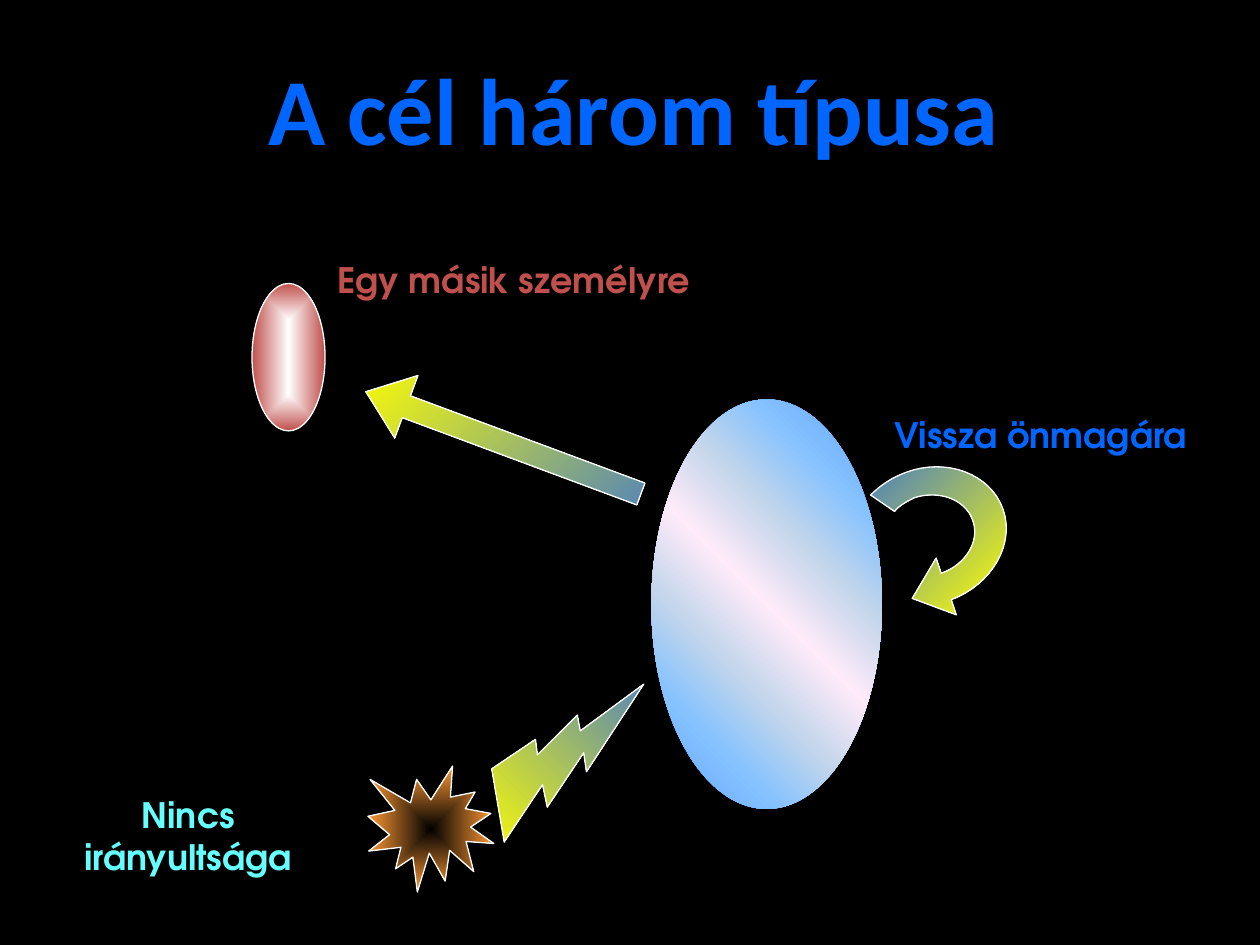
"""Build the slide on the three types of goal."""
from pptx import Presentation
from pptx import util as u
from pptx.dml.color import RGBColor
from pptx.enum import shapes, text
from pptx.oxml import parse_xml
from pptx.oxml.ns import nsdecls, qn


def color(value):
    return RGBColor.from_string(value)


def paint(shape, stops, angle=None, outlined=True):
    shape.shadow.inherit = False
    shape.fill.gradient()
    if angle is None:
        course = ('<a:path path="shape"><a:fillToRect l="50000" t="50000" '
                  'r="50000" b="50000"/></a:path>')
    else:
        course = f'<a:lin ang="{angle * 60000}" scaled="1"/>'
    marks = "".join(f'<a:gs pos="{place * 1000}"><a:srgbClr val="{value}"/></a:gs>'
                    for place, value in stops)
    gradient = parse_xml(f'<a:gradFill {nsdecls("a")} rotWithShape="0">'
                         f'<a:gsLst>{marks}</a:gsLst>{course}</a:gradFill>')
    properties = shape._element.spPr
    properties.replace(properties.find(qn("a:gradFill")), gradient)
    if outlined:
        shape.line.color.rgb = color("FFFFFF")
        shape.line.width = u.Pt(0.75)
    else:
        shape.line.fill.background()


deck = Presentation()
deck.slide_width, deck.slide_height = u.Inches(10), u.Inches(7.5)
page = deck.slides.add_slide(deck.slide_layouts[6])
page.background.fill.solid()
page.background.fill.fore_color.rgb = color("000000")

kinds = shapes.MSO_SHAPE
BLUE_TO_YELLOW = [(0, "4F81BD"), (100, "FFFF00")]
YELLOW_TO_BLUE = [(0, "FFFF00"), (100, "4F81BD")]
SKY = [(0, "5E9EFF"), (20, "85C2FF"), (35, "C4D6EB"), (50, "FFEBFA"),
       (65, "C4D6EB"), (80, "85C2FF"), (100, "5E9EFF")]
ROSE = [(0, "FFFFFF"), (100, "C0504D")]
BURST = [(0, "000000"), (100, "FF9933")]

figures = [
    (kinds.OVAL, (5.17, 3.17, 1.83, 3.25), 0, [], SKY, 315, False),
    (kinds.OVAL, (2, 2.25, 0.58, 1.17), 0, [], ROSE, None, True),
    (kinds.LEFT_ARROW, (2.83, 3.25, 2.33, 0.53), 20.4, [0.35, 0.65],
     YELLOW_TO_BLUE, 45, True),
    (kinds.EXPLOSION1, (2.92, 6.08, 1, 1), 0, [], BURST, None, True),
    (kinds.LIGHTNING_BOLT, (3.75, 5.5, 1.42, 1.08), 279.5, [],
     YELLOW_TO_BLUE, 315, True),
]
for kind, frame, turn, adjustments, stops, angle, outlined in figures:
    figure = page.shapes.add_shape(kind, *map(u.Inches, frame))
    figure.rotation = turn
    for index, amount in enumerate(adjustments):
        figure.adjustments[index] = amount
    paint(figure, stops, angle, outlined)

STEPS = 16
return_path = [
    [(7.67, 4.48), (7.78, 4.29), (7.72, 4.13)],
    [(7.66, 3.96), (7.45, 3.89), (7.26, 3.95)],
    [(7.2, 3.98), (7.14, 4.01), (7.1, 4.06)],
    [(6.91, 3.93)],
    [(6.99, 3.85), (7.08, 3.79), (7.19, 3.75)],
    [(7.51, 3.63), (7.86, 3.76), (7.96, 4.04)],
    [(8.06, 4.32), (7.87, 4.64), (7.55, 4.76)],
    [(7.59, 4.88)], [(7.24, 4.75)], [(7.43, 4.43)],
]
outline = [(7.47, 4.55)]
for part in return_path:
    if len(part) == 1:
        outline += part
        continue
    corners = [outline[-1], *part]
    for step in range(1, STEPS + 1):
        t = step / STEPS
        weights = [(1 - t) ** 3, 3 * t * (1 - t) ** 2, 3 * t ** 2 * (1 - t), t ** 3]
        outline.append(tuple(sum(w * corner[axis] for w, corner in zip(weights, corners))
                             for axis in (0, 1)))
points = [(u.Inches(x), u.Inches(y)) for x, y in outline]
builder = page.shapes.build_freeform(*points[0])
builder.add_line_segments(points[1:], close=True)
paint(builder.convert_to_shape(), BLUE_TO_YELLOW, 45)

LABEL_FONT = "TeX Gyre Adventor"
left, center = text.PP_ALIGN.LEFT, text.PP_ALIGN.CENTER
labels = [
    ("A cél három típusa", (0.78, 0.23, 8.5, 1.25), "Calibri", 54, "0066FF", center),
    ("Egy másik személyre", (2.58, 2, 3.42, 0.43), LABEL_FONT, 20, "C0504D", left),
    ("Vissza önmagára", (7, 3.23, 3.42, 0.43), LABEL_FONT, 20, "0066FF", left),
    ("Nincs irányultsága", (0.33, 6.25, 2.33, 0.77), LABEL_FONT, 20, "66FFFF", center),
]
for wording, frame, font, size, value, alignment in labels:
    box = page.shapes.add_textbox(*map(u.Inches, frame))
    box.text_frame.word_wrap = True
    box.text_frame.vertical_anchor = text.MSO_ANCHOR.MIDDLE
    para = box.text_frame.paragraphs[0]
    para.text = wording
    para.alignment = alignment
    para.font.name = font
    para.font.size = u.Pt(size)
    para.font.bold = True
    para.font.color.rgb = color(value)

deck.save("out.pptx")
